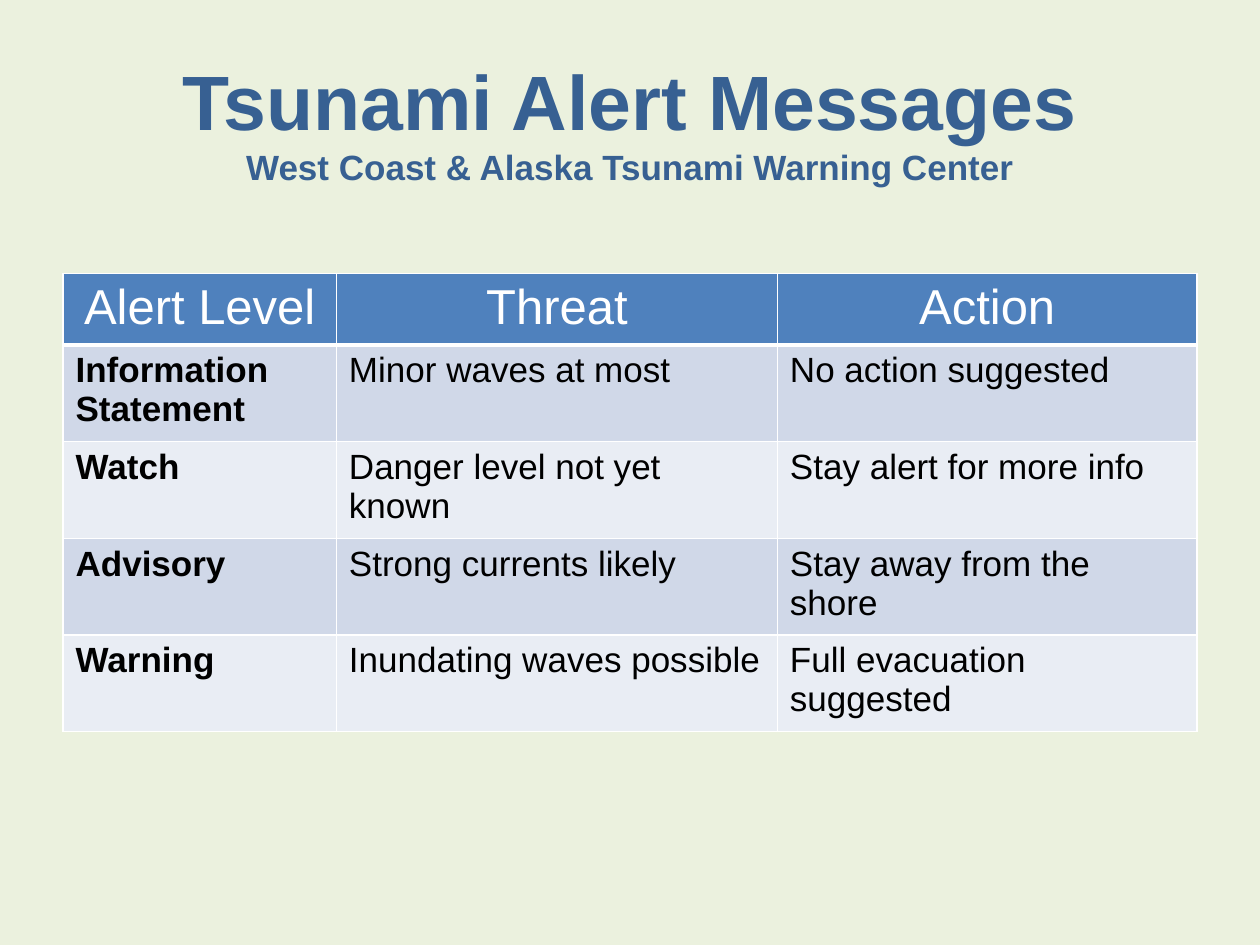
from dataclasses import dataclass
from lxml import etree
from pptx import Presentation
from pptx.dml.color import RGBColor
from pptx.enum.text import MSO_ANCHOR, PP_ALIGN
from pptx.oxml.ns import qn
from pptx.util import Inches, Pt

MID = MSO_ANCHOR.MIDDLE
LEFT, CENTER = PP_ALIGN.LEFT, PP_ALIGN.CENTER
WIDE, HIGH = 10, 7.5
COLS = (2.17, 3.5, 3.33)
ROWS = (0.53, 0.53, 0.67, 0.75, 0.75)
ALERTS = (
    ("Alert Level", "Threat", "Action"),
    ("Information Statement", "Minor waves at most", "No action suggested"),
    ("Watch", "Danger level not yet known", "Stay alert for more info"),
    ("Advisory", "Strong currents likely", "Stay away from the shore"),
    ("Warning", "Inundating waves possible", "Full evacuation suggested"),
)


@dataclass(frozen=True)
class Theme:
    """Hold the colours, font and type sizes."""
    face: str = "Arial"
    back: str = "EBF1DE"
    title: str = "376092"
    head: str = "4F81BD"
    bands: tuple = ("E9EDF4", "D0D8E8")
    light: str = "FFFFFF"
    dark: str = "000000"
    big: int = 44
    mid: int = 28
    small: int = 20


THEME = Theme()


def paint(fill, tint):
    """Give a fill one solid colour."""
    fill.solid()
    fill.fore_color.rgb = RGBColor.from_string(tint)


def write(para, text, size, tint, bold):
    """Add a formatted run to a paragraph."""
    run = para.add_run()
    run.text = text
    look = {"name": THEME.face, "size": Pt(size), "bold": bold}
    for key, value in look.items():
        setattr(run.font, key, value)
    run.font.color.rgb = RGBColor.from_string(tint)


def edge(cell, base):
    """Draw the cell borders, with the given width at the base."""
    props = cell._tc.get_or_add_tcPr()
    sides = {"lnL": 1, "lnR": 1, "lnT": 1, "lnB": base}
    for spot, (side, width) in enumerate(sides.items()):
        line = etree.Element(qn(f"a:{side}"), w=str(Pt(width)))
        fill = etree.SubElement(line, qn("a:solidFill"))
        etree.SubElement(fill, qn("a:srgbClr"), val=THEME.light)
        props.insert(spot, line)


def add_title(slide):
    """Add the heading and the name of the center below it."""
    place = (WIDE / 8, 0.33, WIDE * 3 / 4, HIGH / 6)
    frame = slide.shapes.add_textbox(*map(Inches, place)).text_frame
    frame.word_wrap = True
    frame.vertical_anchor = MID
    para = frame.paragraphs[0]
    para.alignment = CENTER
    write(para, "Tsunami Alert Messages", THEME.big, THEME.title, True)
    para.add_line_break()
    write(para, "West Coast & Alaska Tsunami Warning Center",
          THEME.small, THEME.title, True)


def fill_cell(cell, text, row, col):
    """Set the text, fill and borders of one cell."""
    head = row == 0
    para = cell.text_frame.paragraphs[0]
    para.alignment = CENTER if head else LEFT
    write(para, text, THEME.mid if head else THEME.small,
          THEME.light if head else THEME.dark, not head and col == 0)
    paint(cell.fill, THEME.head if head else THEME.bands[row % 2])
    edge(cell, 3 if head else 1)


def add_grid(slide):
    """Add the table of alert levels."""
    place = (WIDE / 20, 2.17, sum(COLS), sum(ROWS))
    grid = slide.shapes.add_table(
        len(ROWS), len(COLS), *map(Inches, place)).table
    for col, width in zip(grid.columns, COLS):
        col.width = Inches(width)
    for row, height in zip(grid.rows, ROWS):
        row.height = Inches(height)
    for row, texts in enumerate(ALERTS):
        for col, text in enumerate(texts):
            fill_cell(grid.cell(row, col), text, row, col)


def main():
    """Build and save the slide."""
    deck = Presentation()
    deck.slide_width, deck.slide_height = Inches(WIDE), Inches(HIGH)
    slide = deck.slides.add_slide(deck.slide_layouts[6])
    paint(slide.background.fill, THEME.back)
    add_title(slide)
    add_grid(slide)
    deck.save("out.pptx")


if __name__ == "__main__":
    main()
